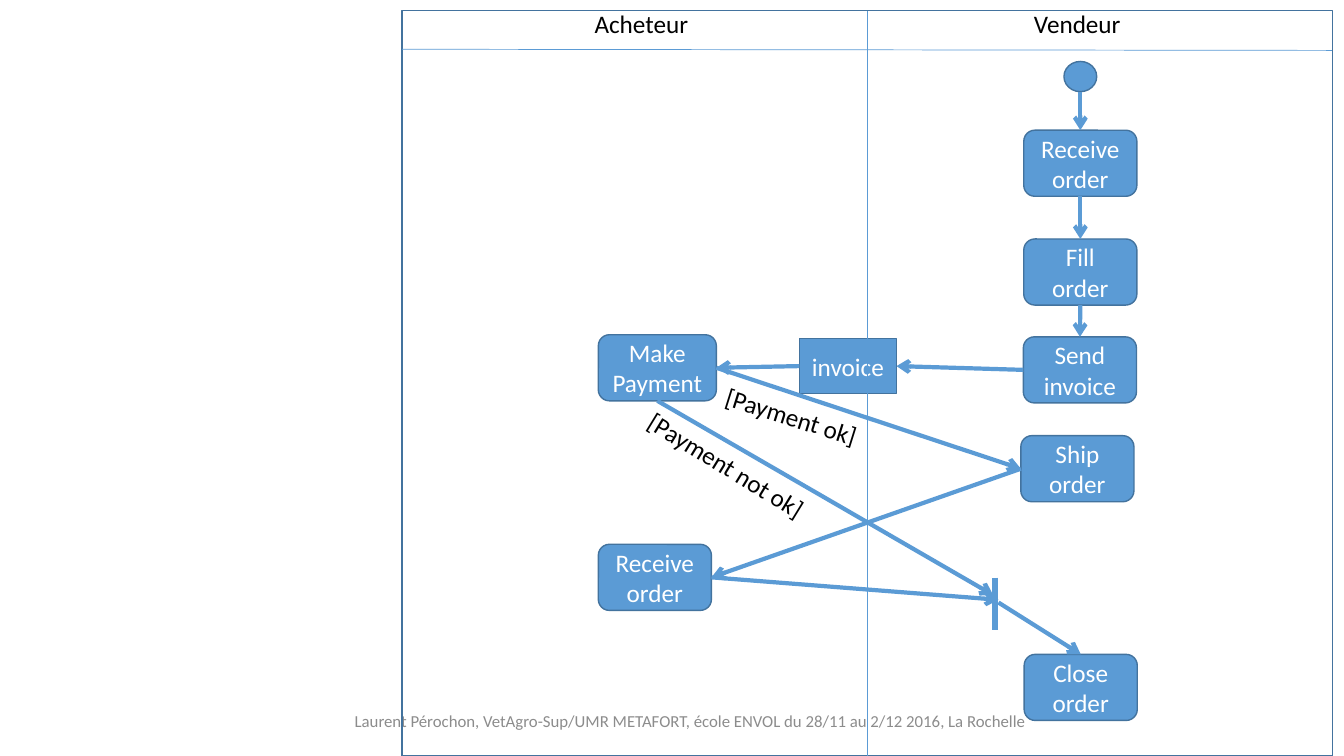
"""Build the order activity diagram with buyer and seller lanes."""
from lxml import etree
from pptx import Presentation
from pptx.dml.color import RGBColor
from pptx.enum import shapes as s, text as t
from pptx.oxml import ns
from pptx.util import Pt

BLUE, EDGE, WHITE, BLACK, GREY = "5B9BD5", "43739E", "FFFFFF", "000000", "8C8C8C"
KIND = s.MSO_SHAPE

deck = Presentation()
deck.slide_width, deck.slide_height = Pt(960), Pt(540)
page = deck.slides.add_slide(deck.slide_layouts[6])
items = page.shapes


def tint(part, code):
    if hasattr(part, "solid"):
        part.solid()
        part = part.fore_color
    part.rgb = RGBColor.from_string(code)


def write(shape, words, size, code, align, **frame):
    for key, val in frame.items():
        setattr(shape.text_frame, key, val)
    para = shape.text_frame.paragraphs[0]
    para.alignment = align
    run = para.add_run()
    run.text = words
    for key, val in {"size": Pt(size), "name": "Calibri"}.items():
        setattr(run.font, key, val)
    tint(run.font.color, code)


MID = t.MSO_ANCHOR.MIDDLE
MIDDLE, LEFT = t.PP_ALIGN.CENTER, t.PP_ALIGN.LEFT

foot = items.add_textbox(Pt(165.6), Pt(500.4), Pt(655.2), Pt(28.8))
write(foot, "Laurent Pérochon, VetAgro-Sup/UMR METAFORT, école ENVOL du 28/11 au 2/12 2016, La Rochelle",
      12, GREY, MIDDLE, word_wrap=True, vertical_anchor=MID)

nodes = {}
for name, kind, x, y, w, h, words in [
    ("frame", KIND.RECTANGLE, 287.3, 7.7, 664.6, 532.3, ""),
    ("start", KIND.OVAL, 760, 43.9, 23.4, 21.6, ""),
    ("take", KIND.ROUNDED_RECTANGLE, 731.3, 93, 80.8, 47.2, "Receive order"),
    ("fill", KIND.ROUNDED_RECTANGLE, 731.3, 170.7, 80.8, 47.2, "Fill order"),
    ("send", KIND.ROUNDED_RECTANGLE, 731, 240.6, 80.8, 47.2, "Send invoice"),
    ("ship", KIND.ROUNDED_RECTANGLE, 729.2, 311.2, 80.8, 47.2, "Ship order"),
    ("close", KIND.ROUNDED_RECTANGLE, 731.6, 467.4, 80.8, 47.2, "Close order"),
    ("pay", KIND.ROUNDED_RECTANGLE, 427.4, 239.1, 84.3, 47.2, "Make Payment"),
    ("get", KIND.ROUNDED_RECTANGLE, 427.4, 388.8, 80.8, 47.2, "Receive order"),
    ("bill", KIND.RECTANGLE, 571, 242, 69.4, 39, "invoice"),
]:
    node = nodes[name] = items.add_shape(kind, Pt(x), Pt(y), Pt(w), Pt(h))
    node.shadow.inherit = False
    node.line.width = Pt(1)
    tint(node.line.fill, EDGE)
    if name == "frame":
        node.fill.background()
    else:
        tint(node.fill, BLUE)
    if words:
        write(node, words, 18, WHITE, MIDDLE, word_wrap=True, vertical_anchor=MID)

for start, end, width, head in [
    ((619.4, 7.7), (619.4, 540), 0.5, False),
    ((287.3, 35.2), (951.4, 36), 0.5, False),
    ((710.6, 412.6), (710.6, 450), 4.5, False),
    (("start", 2), ("take", 0), 3, True),
    (("take", 2), ("fill", 0), 3, True),
    (("fill", 2), ("send", 0), 3, True),
    (("send", 1), ("bill", 3), 3, True),
    (("bill", 1), ("pay", 3), 3, True),
    (("pay", 3), ("ship", 1), 3, True),
    (("ship", 1), ("get", 3), 3, True),
    (("get", 3), (713.2, 428.4), 3, True),
    (("pay", 2), (709.4, 425), 3, True),
    ((713.2, 430.4), ("close", 0), 3, True),
]:
    loose = [end if isinstance(p[0], str) else p for p in (start, end)]
    ends = [Pt(v) if not isinstance(v, str) else Pt(0) for p in loose for v in p]
    if not isinstance(start[0], str):
        ends[:2] = [Pt(v) for v in start]
    link = items.add_connector(s.MSO_CONNECTOR.STRAIGHT, *ends)
    for point, join in [(start, link.begin_connect), (end, link.end_connect)]:
        if isinstance(point[0], str):
            join(nodes[point[0]], point[1])
    link.line.width = Pt(width)
    tint(link.line.fill, BLUE)
    if head:
        etree.SubElement(link.line._get_or_add_ln(), ns.qn("a:tailEnd"), type="arrow")
    etree.SubElement(link._element.spPr, ns.qn("a:effectLst"))

for words, x, y, w, turn in [
    ("Acheteur", 417.6, 2.2, 82.1, 0),
    ("Vendeur", 731.5, 2.2, 77, 0),
    ("[Payment ok]", 509.8, 283, 112.3, 17.4),
    ("[Payment not ok]", 448.6, 318.2, 141.8, 31.5),
]:
    label = items.add_textbox(Pt(x), Pt(y), Pt(w), Pt(29))
    label.rotation = turn
    write(label, words, 18, BLACK, LEFT, word_wrap=False,
          auto_size=t.MSO_AUTO_SIZE.SHAPE_TO_FIT_TEXT)

deck.save("out.pptx")
